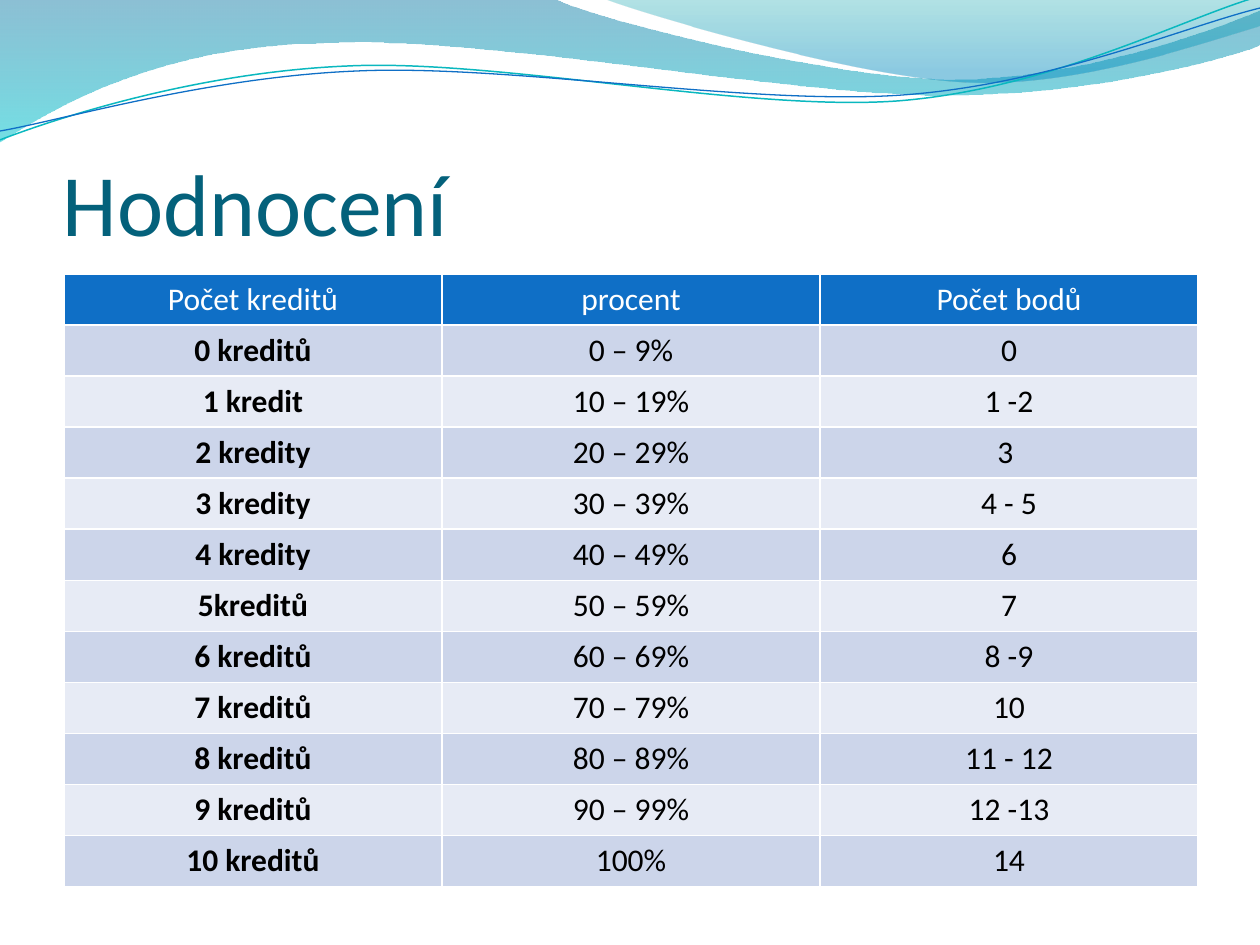
"""Grading slide: a wave header, a title and a table of credits, percentages and points."""
from math import cos, radians, sin
from lxml.etree import SubElement
from pptx import Presentation
from pptx.dml.color import RGBColor
from pptx.enum.text import MSO_ANCHOR, PP_ALIGN
from pptx.oxml.ns import qn
from pptx.util import Pt

PX = 914400 / 126
FONT = "Calibri"
TILT = 2.7
COLORS = {"title": "04617B", "head": "0F6FC6", "odd": "CCD5EA", "even": "E7EBF5",
          "white": "FFFFFF", "black": "000000", "teal": "0AB8BF"}


def px(n):
    return round(n * PX)


def add_wave(shapes, start, segments, closed):
    points = [(px(x), px(y)) for x, y in [start, *sum(segments, [])]]
    fb = shapes.build_freeform(*points[0], scale=1.0)
    fb.add_line_segments(points[1:], close=closed)
    sp = fb.convert_to_shape()
    sp.shadow.inherit = False
    lines = iter(list(sp._element.iter(qn("a:lnTo"))))
    for seg in segments:
        line = next(lines)
        if len(seg) == 3:
            line.tag = qn("a:cubicBezTo")
            for other in (next(lines), next(lines)):
                line.append(other[0])
                other.getparent().remove(other)
    return sp


prs = Presentation()
prs.slide_width, prs.slide_height = px(1260), px(945)
s = prs.slides.add_slide(prs.slide_layouts[6])

bands = [
    ((0, 0), [[(554, -1)], [(600, 21), (837, 79), (955, 79)],
              [(1075, 79), (1207, 33), (1260, 11)], [(1261, 45)],
              [(1239, 55), (1096, 96), (940, 95)], [(784, 95), (481, 35), (324, 43)],
              [(163, 45), (58, 105), (-1, 142)], [(0, 0)]],
     [(0, "0074A1", 45), (1, "00C6CF", 55)]),
    ((604, -1), [[(641, 14), (859, 78), (969, 82)], [(1079, 87), (1211, 40), (1260, 26)],
                 [(1260, 0)], [(604, -1)]],
     [(0, "00A1A9", 30), (0.8, "008BBF", 45)]),
]
for start, segments, stops in bands:
    sp = add_wave(s.shapes, start, segments, True)
    sp.line.fill.background()
    sp.fill.gradient()
    sp.fill.gradient_angle = 270
    for stop, (position, color, opacity) in zip(sp.fill.gradient_stops, stops):
        stop.position = position
        stop.color.rgb = RGBColor.from_string(color)
    for clr, (position, color, opacity) in zip(sp._element.spPr.iter(qn("a:srgbClr")), stops):
        SubElement(clr, qn("a:alpha"), val=str(opacity * 1000))

strands = [
    ((0, 140), [[(60, 117), (199, 72), (349, 66)], [(498, 59), (747, 112), (898, 101)],
                [(1050, 89), (1182, 19), (1257, -3)]], (629, 72), "teal", 0.85),
    ((0, 131), [[(59, 121), (207, 77), (357, 71)], [(508, 64), (752, 106), (903, 95)],
                [(1053, 84), (1186, 26), (1260, 8)]], (629, 74), "head", 0.75),
]
c, d = cos(radians(TILT)), sin(radians(TILT))
for start, segments, (cx, cy), color, width in strands:
    level = [[(cx + c * (x - cx) - d * (y - cy), cy + d * (x - cx) + c * (y - cy))
              for x, y in seg] for seg in [[start], *segments]]
    sp = add_wave(s.shapes, level[0][0], level[1:], False)
    sp.rotation = 360 - TILT
    sp.fill.background()
    sp.line.color.rgb = RGBColor.from_string(COLORS[color])
    sp.line.width = Pt(width)

title = s.shapes.add_textbox(px(63), px(97), px(1134), px(157))
tf = title.text_frame
tf.word_wrap = True
tf.vertical_anchor = MSO_ANCHOR.BOTTOM
tf.margin_left = tf.margin_right = tf.margin_bottom = 0
tf.text = "Hodnocení"
font = tf.paragraphs[0].runs[0].font
font.name, font.size = FONT, Pt(50)
font.color.rgb = RGBColor.from_string(COLORS["title"])

rows = [
    ("Počet kreditů", "procent", "Počet bodů"),
    ("0 kreditů", "0 – 9%", "0"),
    ("1 kredit", "10 – 19%", "1 -2"),
    ("2 kredity", "20 – 29%", "3 "),
    ("3 kredity", "30 – 39%", "4 - 5"),
    ("4 kredity", "40 – 49%", "6"),
    ("5kreditů", "50 – 59%", "7"),
    ("6 kreditů", "60 – 69%", "8 -9"),
    ("7 kreditů", "70 – 79%", "10"),
    ("8 kreditů", "80 – 89%", "11 - 12"),
    ("9 kreditů", "90 – 99%", "12 -13"),
    ("10 kreditů", "100%", "14"),
]
table = s.shapes.add_table(len(rows), 3, px(64), px(274), px(1134), px(613)).table
for i, row in enumerate(rows):
    fill = "head" if i == 0 else "odd" if i % 2 else "even"
    for j, text in enumerate(row):
        cell = table.cell(i, j)
        cell.text = text
        cell.fill.solid()
        cell.fill.fore_color.rgb = RGBColor.from_string(COLORS[fill])
        p = cell.text_frame.paragraphs[0]
        p.alignment = PP_ALIGN.CENTER
        font = p.runs[0].font
        font.name, font.size = FONT, Pt(18)
        font.bold = i > 0 and j == 0
        font.color.rgb = RGBColor.from_string(COLORS["black" if i else "white"])

prs.save("out.pptx")
